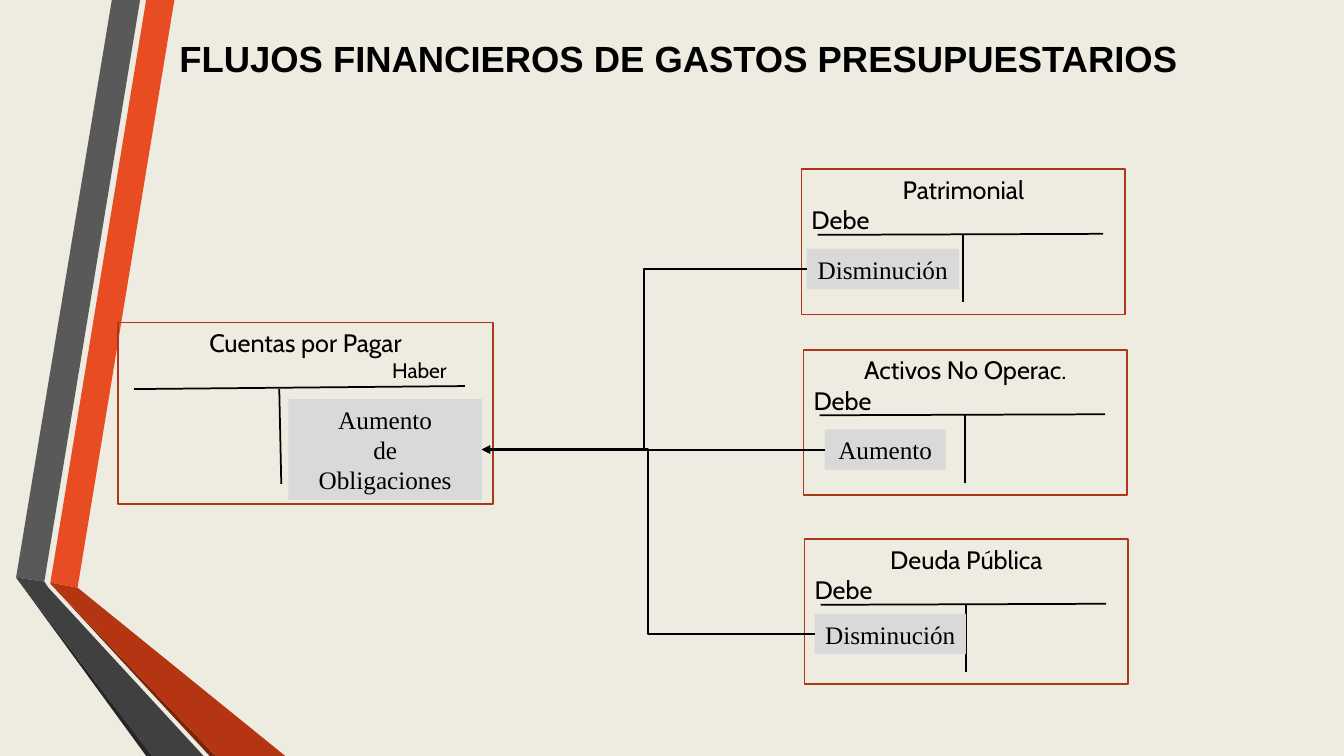
from dataclasses import dataclass

from lxml.etree import SubElement
from pptx import Presentation
from pptx.dml.color import RGBColor
from pptx.enum.shapes import MSO_CONNECTOR as Link, MSO_SHAPE as Preset
from pptx.enum.text import MSO_ANCHOR as Anchor, PP_ALIGN as Align
from pptx.oxml.ns import qn
from pptx.util import Emu, Pt

PX = 9144  # EMU per px, 100 px to the inch
BLACK, PAPER, CHIP, FRAME = "000000", "EEECE1", "D9D9D9", "AC3819"

Point = tuple[int, int]
Box = tuple[int, int, int, int]


@dataclass
class Ribbon:
    color: str
    outline: list[Point]


@dataclass
class Account:
    heading: str
    side: str
    box: Box
    bar: tuple[Point, Point]
    stem: tuple[Point, Point]
    effect: list[str]
    effect_box: Box
    side_size: int = 18
    side_indent: int = 0


RIBBONS = [
    Ribbon("E84C22", [(50, 578), (77, 583), (173, 0), (145, 0)]),
    Ribbon("595959", [(139, 0), (111, 0), (16, 573), (44, 577)]),
    Ribbon("262626", [(16, 573), (145, 750), (151, 750)]),
    Ribbon("78230D", [(50, 579), (208, 750), (214, 750)]),
    Ribbon("B53513", [(50, 579), (214, 750), (283, 750), (77, 583), (50, 578)]),
    Ribbon("404040", [(202, 750), (48, 583), (44, 577), (16, 573), (151, 750)]),
]


def debit_account(heading: str, x: int, y: int, effect: str, effect_box: Box) -> Account:
    bar = ((x + 16, y + 65), (x + 299, y + 64))
    stem = ((x + 160, y + 65), (x + 160, y + 132))
    return Account(heading, "Debe", (x, y, 321, 144), bar, stem, [effect], effect_box)


PAYABLES = Account(
    "Cuentas por Pagar", "Haber", (117, 320, 372, 180),
    ((133, 386), (461, 383)), ((277, 386), (279, 480)),
    ["Aumento", "de", "Obligaciones"], (286, 396, 192, 100),
    side_size=15, side_indent=262,
)
DEBITS = [
    debit_account("Patrimonial", 795, 168, "Disminución", (800, 247, 151, 40)),
    debit_account("Activos No Operac.", 797, 347, "Aumento", (818, 426, 120, 40)),
    debit_account("Deuda Pública", 798, 535, "Disminución", (808, 609, 150, 40)),
]


def px(*lengths: int) -> list[Emu]:
    return [Emu(length * PX) for length in lengths]


def rgb(color: str) -> RGBColor:
    return RGBColor.from_string(color)


def paint(shape, fill: str | None = None, line: str | None = None) -> None:
    shape.shadow.inherit = False
    if fill:
        shape.fill.solid()
        shape.fill.fore_color.rgb = rgb(fill)
    else:
        shape.fill.background()
    if line:
        shape.line.color.rgb = rgb(line)
        shape.line.width = Pt(1.25)
    else:
        shape.line.fill.background()


def write(paragraph, text: str, font: str, size: int, align=Align.CENTER, bold: bool = False) -> None:
    paragraph.alignment = align
    run = paragraph.add_run()
    run.text = text
    run.font.name, run.font.size, run.font.bold = font, Pt(size), bold
    run.font.color.rgb = rgb(BLACK)


def draw_ribbon(shapes, ribbon: Ribbon) -> None:
    start, *rest = ribbon.outline
    builder = shapes.build_freeform(*start, scale=PX)
    builder.add_line_segments(rest, close=True)
    paint(builder.convert_to_shape(), fill=ribbon.color)


def draw_line(shapes, kind, start: Point, end: Point, width: float):
    line = shapes.add_connector(kind, *px(*start, *end))
    line.line.color.rgb = rgb(BLACK)
    line.line.width = Pt(width)
    SubElement(line._element.spPr, qn("a:effectLst"))
    return line


def draw_rectangle(shapes, box: Box, fill: str | None = None, line: str | None = None):
    rectangle = shapes.add_shape(Preset.RECTANGLE, *px(*box))
    paint(rectangle, fill, line)
    rectangle.text_frame.vertical_anchor = Anchor.TOP
    return rectangle


def draw_account(shapes, account: Account):
    """Draw the T account and return its highlighted effect."""
    frame = draw_rectangle(shapes, account.box, line=FRAME).text_frame
    write(frame.paragraphs[0], account.heading, "Cabin", 18)
    side = frame.add_paragraph()
    write(side, account.side, "Cabin", account.side_size, Align.LEFT)
    side._p.get_or_add_pPr().set("marL", str(account.side_indent * PX))
    for start, end in (account.bar, account.stem):
        draw_line(shapes, Link.STRAIGHT, start, end, 1.25)

    effect = draw_rectangle(shapes, account.effect_box, fill=CHIP)
    effect.text_frame.word_wrap = False
    for index, words in enumerate(account.effect):
        lines = effect.text_frame
        paragraph = lines.add_paragraph() if index else lines.paragraphs[0]
        write(paragraph, words, "Times New Roman", 18)
    return effect


def draw_flow(shapes, source, target) -> None:
    flow = draw_line(shapes, Link.ELBOW, (0, 0), (1, 1), 1.5)
    flow.begin_connect(source, 1)
    flow.end_connect(target, 3)
    SubElement(flow.line._get_or_add_ln(), qn("a:tailEnd"), type="triangle")


def main() -> None:
    deck = Presentation()
    deck.slide_width, deck.slide_height = px(1333, 750)
    slide = deck.slides.add_slide(deck.slide_layouts[5])
    shapes = slide.shapes

    # Background and ribbons
    slide.background.fill.solid()
    slide.background.fill.fore_color.rgb = rgb(PAPER)
    for ribbon in RIBBONS:
        draw_ribbon(shapes, ribbon)

    # Title
    title = shapes.title
    title.left, title.top, title.width, title.height = px(159, 30, 1029, 54)
    write(title.text_frame.paragraphs[0], "FLUJOS FINANCIEROS DE GASTOS PRESUPUESTARIOS",
          "Arial", 26, bold=True)

    # Accounts and the flows between them
    debits = [draw_account(shapes, account) for account in DEBITS]
    obligations = draw_account(shapes, PAYABLES)
    for debit in debits:
        draw_flow(shapes, debit, obligations)

    deck.save("out.pptx")


if __name__ == "__main__":
    main()
